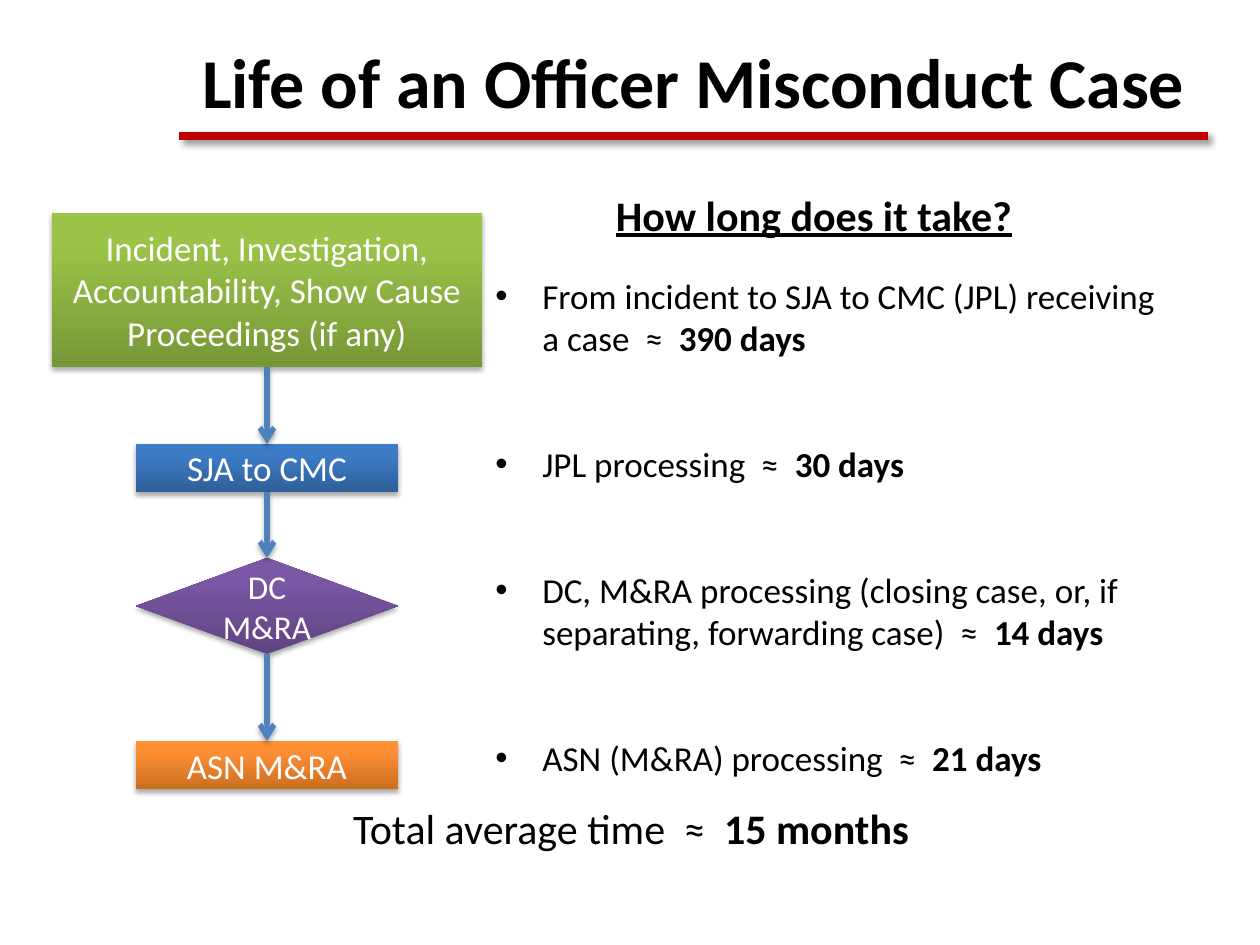
from lxml import etree
from pptx import Presentation
from pptx.dml.color import RGBColor
from pptx.enum.shapes import MSO_CONNECTOR, MSO_SHAPE
from pptx.enum.text import MSO_ANCHOR, PP_ALIGN
from pptx.oxml.ns import qn
from pptx.util import Emu, Pt

PX = 914400 / 126
STRAIGHT = MSO_CONNECTOR.STRAIGHT
PROCESS = MSO_SHAPE.FLOWCHART_PROCESS
DECISION = MSO_SHAPE.FLOWCHART_DECISION
PREDEFINED = MSO_SHAPE.FLOWCHART_PREDEFINED_PROCESS
CENTER, LEFT = PP_ALIGN.CENTER, PP_ALIGN.LEFT
TOP_SIDE, BOTTOM_SIDE = 0, 2

COLORS = {
    "text": "000000", "white": "FFFFFF", "rule": "C00000", "arrow": "4F81BD",
    "green": ("779737", "9BC348"), "blue": ("2F5F99", "3D7CC7"),
    "purple": ("5F4480", "7B58A6"), "orange": ("CC6E20", "FF9034"),
}
# Shadow values: opacity in percent, blur and distance in points, angle in degrees
SOFT_SHADOW = (35, 3.1, 1.8, 90)
RULE_SHADOW = (40, 4, 3, 45)


def px(value):
    return Emu(round(value * PX))


def rgb(name):
    return RGBColor.from_string(COLORS[name])


def add_shadow(shape, opacity, blur, distance, angle):
    properties = shape.element.spPr
    effects = properties.find(qn("a:effectLst"))
    if effects is None:
        effects = etree.SubElement(properties, qn("a:effectLst"))
    shadow = etree.SubElement(
        effects, qn("a:outerShdw"), blurRad=str(Pt(blur)), dist=str(Pt(distance)),
        dir=str(angle * 60000), rotWithShape="0")
    color = etree.SubElement(shadow, qn("a:srgbClr"), val=COLORS["text"])
    etree.SubElement(color, qn("a:alpha"), val=str(opacity * 1000))


def add_span(para, text, size, color="text", **formats):
    span = para.add_run()
    span.text = text
    span.font.color.rgb = rgb(color)
    for key, value in {"name": "Calibri", "size": Pt(size), **formats}.items():
        setattr(span.font, key, value)


def add_text_box(page, box, align, spans, size):
    """Place a one-paragraph text box; spans are (text, formats) pairs."""
    frame = page.shapes.add_textbox(*map(px, box)).text_frame
    frame.word_wrap = True
    para = frame.paragraphs[0]
    para.alignment = align
    for text, formats in spans:
        add_span(para, text, size, **formats)
    return frame


def add_line(page, color, width, shadow, start=(0, 0), end=(0, 0)):
    line = page.shapes.add_connector(STRAIGHT, *map(px, (*start, *end)))
    line.line.color.rgb = rgb(color)
    line.line.width = Pt(width)
    add_shadow(line, *shadow)
    return line


def add_header(page, left, top, width, height):
    add_text_box(page, (left, top, width, height), CENTER,
                 [("Life of an Officer Misconduct Case", {"bold": True})], 40)
    rule_y = top + 104
    add_line(page, "rule", 5, RULE_SHADOW, (left, rule_y), (left + width, rule_y))


def add_step(page, kind, box, color, text, size):
    step = page.shapes.add_shape(kind, *map(px, box))
    step.shadow.inherit = False
    step.line.fill.background()
    step.fill.gradient()
    step.fill.gradient_angle = 90
    for stop, position, value in zip(step.fill.gradient_stops, (0, 0.8), COLORS[color]):
        stop.position = position
        stop.color.rgb = RGBColor.from_string(value)
    add_shadow(step, *SOFT_SHADOW)
    frame = step.text_frame
    frame.word_wrap = True
    frame.vertical_anchor = MSO_ANCHOR.MIDDLE
    frame.paragraphs[0].alignment = CENTER
    add_span(frame.paragraphs[0], text, size, "white")
    return step


def add_flow(page, left, top, width):
    """Place the four steps on one centre line and join them with arrows."""
    steps = [
        # kind, offset from top, width, height, colour, text, size
        (PROCESS, 0, width, 154, "green",
         "Incident, Investigation, Accountability, Show Cause Proceedings (if any)", 20),
        (PROCESS, 231, 262, 48, "blue", "SJA to CMC", 20),
        (DECISION, 345, 262, 96, "purple", "DC M&RA", 19),
        (PREDEFINED, 528, 262, 48, "orange", "ASN M&RA", 20),
    ]
    placed = []
    for kind, offset, step_width, height, color, text, size in steps:
        box = (left + (width - step_width) // 2, top + offset, step_width, height)
        placed.append(add_step(page, kind, box, color, text, size))
    for upper, lower in zip(placed, placed[1:]):
        arrow = add_line(page, "arrow", 3, SOFT_SHADOW)
        arrow.begin_connect(upper, BOTTOM_SIDE)
        arrow.end_connect(lower, TOP_SIDE)
        etree.SubElement(arrow.element.spPr.find(qn("a:ln")), qn("a:tailEnd"), type="arrow")


def add_durations(page, left, top, width, height):
    # Heading
    add_text_box(page, (left + 21, top, 620, 63), CENTER,
                 [("How long does it take?", {"bold": True, "underline": True})], 24)
    # Bulleted durations
    items = [
        ("From incident to SJA to CMC (JPL) receiving a case", "390 days"),
        ("JPL processing", "30 days"),
        ("DC, M&RA processing (closing case, or, if separating, forwarding case)", "14 days"),
        ("ASN (M&RA) processing", "21 days"),
    ]
    frame = add_text_box(page, (left, top + 85, width, height - 85), LEFT, [], 20)
    for index, (stage, days) in enumerate(items):
        para = frame.add_paragraph() if index else frame.paragraphs[0]
        properties = para._p.get_or_add_pPr()
        properties.set("marL", str(px(47)))
        properties.set("indent", str(-px(47)))
        etree.SubElement(properties, qn("a:buFont"), typeface="Arial")
        etree.SubElement(properties, qn("a:buChar"), char="•")
        if index:
            para.space_before = Pt(48)
        add_span(para, f"{stage}  ≈  ", 20)
        add_span(para, days, 20, bold=True)


def add_total(page, *box):
    add_text_box(page, box, CENTER,
                 [("Total average time  ≈  ", {}), ("15 months", {"bold": True})], 24)


def main():
    deck = Presentation()
    deck.slide_width, deck.slide_height = px(1260), px(945)
    page = deck.slides.add_slide(deck.slide_layouts[6])
    add_header(page, 179, 32, 1029, 97)
    add_flow(page, 52, 213, 430)
    add_durations(page, 483, 183, 703, 607)
    add_total(page, 211, 796, 840, 63)
    deck.save("out.pptx")


if __name__ == "__main__":
    main()
